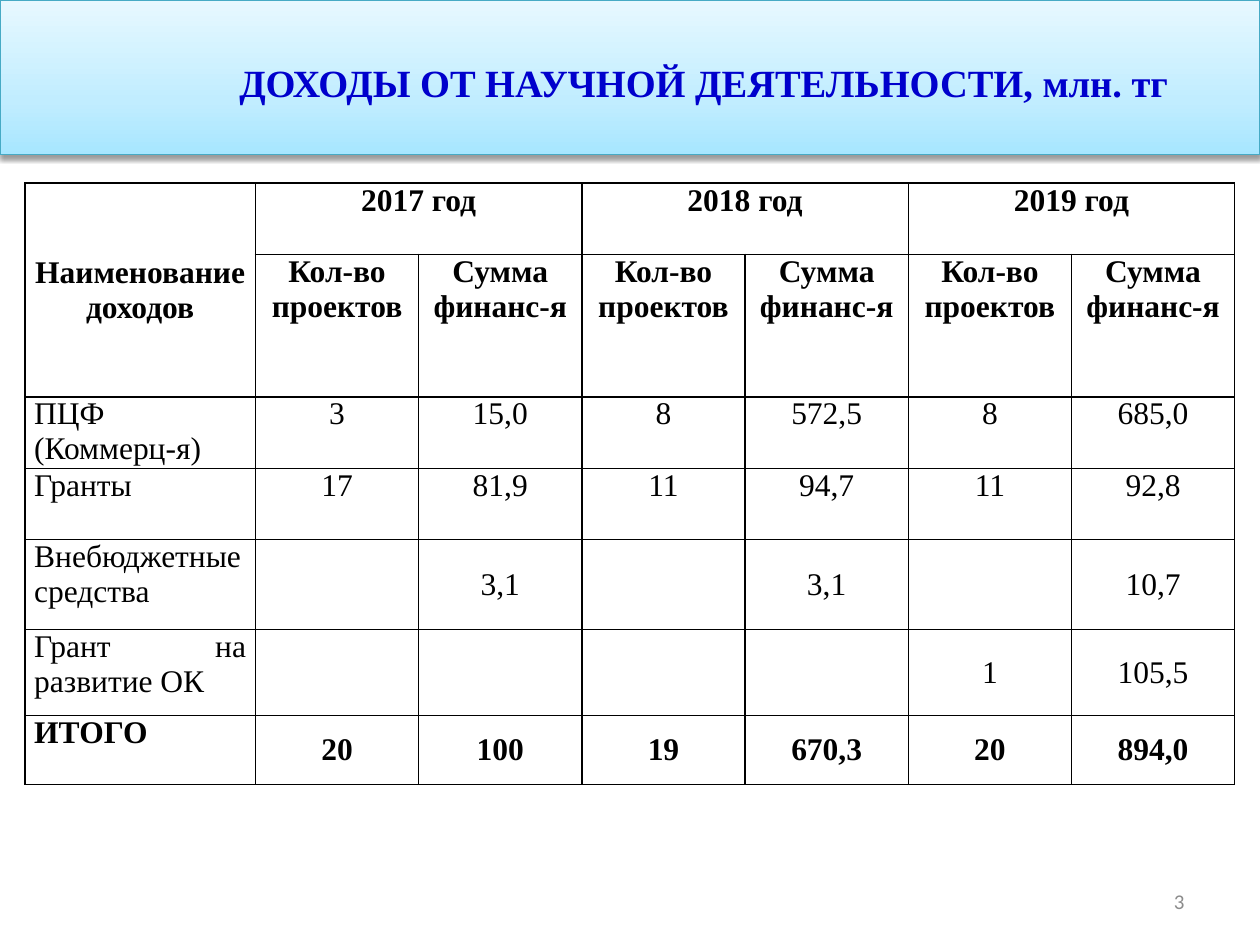
from dataclasses import dataclass

from lxml import etree
from pptx import Presentation
from pptx.dml.color import RGBColor
from pptx.enum.shapes import MSO_SHAPE
from pptx.enum.text import MSO_ANCHOR, PP_ALIGN
from pptx.oxml import parse_xml
from pptx.oxml.ns import nsdecls, qn
from pptx.util import Cm, Pt

CENTER, JUSTIFY, RIGHT = PP_ALIGN.CENTER, PP_ALIGN.JUSTIFY, PP_ALIGN.RIGHT
TOP, MIDDLE = MSO_ANCHOR.TOP, MSO_ANCHOR.MIDDLE
RECTANGLE = MSO_SHAPE.RECTANGLE
TITLE_ONLY = 5


@dataclass(frozen=True)
class Theme:
    serif: str = "Times New Roman"
    sans: str = "Calibri"
    title_size: int = 22
    table_size: int = 18
    number_size: int = 12
    title_color: str = "0000CC"
    text_color: str = "000000"
    number_color: str = "8C8C8C"
    banner_line: str = "46AAC5"
    banner_stops: tuple = ((0, "A7E6FF"), (35, "C1EDFF"), (100, "E7F8FF"))


class SlideBuilder:
    def __init__(self, slide, theme):
        self.slide = slide
        self.theme = theme

    def set_text(self, text_frame, text, font, size, color, bold=False, align=CENTER):
        text_frame.text = text
        for paragraph in text_frame.paragraphs:
            paragraph.alignment = align
            for run in paragraph.runs:
                run.font.name = font
                run.font.size = Pt(size)
                run.font.bold = bold
                run.font.color.rgb = RGBColor.from_string(color)

    def title(self, text, left, top, width, height):
        title = self.slide.shapes.title
        title.left, title.top, title.width, title.height = left, top, width, height
        title.text_frame.vertical_anchor = MIDDLE
        theme = self.theme
        self.set_text(title.text_frame, text, theme.serif, theme.title_size,
                      theme.title_color, bold=True)

    def banner(self, left, top, width, height):
        banner = self.slide.shapes.add_shape(RECTANGLE, left, top, width, height)
        banner.line.color.rgb = RGBColor.from_string(self.theme.banner_line)
        banner.line.width = Pt(0.75)
        stops = "".join(
            f'<a:gs pos="{position * 1000}"><a:srgbClr val="{color}"/></a:gs>'
            for position, color in self.theme.banner_stops)
        properties = banner.element.spPr
        properties.find(qn("a:prstGeom")).addnext(parse_xml(
            f'<a:gradFill {nsdecls("a")} rotWithShape="1"><a:gsLst>{stops}</a:gsLst>'
            '<a:lin ang="16200000" scaled="1"/></a:gradFill>'))
        properties.append(parse_xml(
            f'<a:effectLst {nsdecls("a")}><a:outerShdw blurRad="{Pt(3.1)}" '
            f'dist="{Pt(1.6)}" dir="5400000" rotWithShape="0"><a:srgbClr val="000000">'
            '<a:alpha val="38000"/></a:srgbClr></a:outerShdw></a:effectLst>'))
        # The banner lies behind the title
        self.slide.shapes.title.element.addprevious(banner.element)

    def cell_borders(self, cell):
        properties = cell._tc.get_or_add_tcPr()
        for side in ("a:lnL", "a:lnR", "a:lnT", "a:lnB"):
            line = etree.SubElement(properties, qn(side), w=str(Pt(1)))
            fill = etree.SubElement(line, qn("a:solidFill"))
            etree.SubElement(fill, qn("a:srgbClr"), val=self.theme.text_color)

    def table(self, rows, left, top, column_widths, row_heights, merges,
              bold_rows, middle_cells):
        frame = self.slide.shapes.add_table(
            len(rows), len(column_widths), left, top,
            sum(column_widths), sum(row_heights))
        table = frame.table
        table.first_row = table.horz_banding = False
        for column, width in zip(table.columns, column_widths):
            column.width = width
        for row, height in zip(table.rows, row_heights):
            row.height = height
        for first, last in merges:
            table.cell(*first).merge(table.cell(*last))

        theme = self.theme
        for row_index, values in enumerate(rows):
            for column_index, value in enumerate(values):
                cell = table.cell(row_index, column_index)
                self.cell_borders(cell)
                cell.fill.background()
                cell.margin_left = cell.margin_right = Cm(0.19)
                cell.margin_top = cell.margin_bottom = 0
                is_middle = middle_cells(row_index, column_index)
                cell.vertical_anchor = MIDDLE if is_middle else TOP
                if value:
                    is_label = column_index == 0 and row_index > 1
                    self.set_text(cell.text_frame, value, theme.serif,
                                  theme.table_size, theme.text_color,
                                  bold=row_index in bold_rows,
                                  align=JUSTIFY if is_label else CENTER)

    def slide_number(self, text, left, top, width, height):
        box = self.slide.shapes.add_textbox(left, top, width, height)
        box.text_frame.word_wrap = True
        box.text_frame.vertical_anchor = MIDDLE
        theme = self.theme
        self.set_text(box.text_frame, text, theme.sans, theme.number_size,
                      theme.number_color, align=RIGHT)


YEARS = ("2017 год", "2018 год", "2019 год")
INCOME = [
    ["Наименование доходов"] + [text for year in YEARS for text in (year, "")],
    [""] + ["Кол-во проектов", "Сумма финанс-я"] * len(YEARS),
    ["ПЦФ (Коммерц-я)", "3", "15,0", "8", "572,5", "8", "685,0"],
    ["Гранты", "17", "81,9", "11", "94,7", "11", "92,8"],
    ["Внебюджетные средства", "", "3,1", "", "3,1", "", "10,7"],
    ["Грант на развитие ОК", "", "", "", "", "1", "105,5"],
    ["ИТОГО", "20", "100", "19", "670,3", "20", "894,0"],
]


def main():
    presentation = Presentation()
    presentation.slide_width, presentation.slide_height = Cm(25.4), Cm(19.05)
    slide = presentation.slides.add_slide(presentation.slide_layouts[TITLE_ONLY])
    builder = SlideBuilder(slide, Theme())

    # Heading
    builder.banner(0, 0, presentation.slide_width, Cm(3.12))
    builder.title("ДОХОДЫ ОТ НАУЧНОЙ ДЕЯТЕЛЬНОСТИ, млн. тг",
                  Cm(4.09), 0, Cm(20.19), Cm(3.33))

    # Income table: each year spans a pair of columns
    year_merges = [((0, column), (0, column + 1)) for column in (1, 3, 5)]
    builder.table(
        INCOME, Cm(0.5), Cm(3.69),
        column_widths=[Cm(4.65)] + [Cm(3.29)] * 6,
        row_heights=[Cm(h) for h in (1.44, 2.87, 1.44, 1.44, 1.81, 1.73, 1.4)],
        merges=[((0, 0), (1, 0))] + year_merges,
        bold_rows=(0, 1, len(INCOME) - 1),
        middle_cells=lambda row, column: (row > 3) if column else row == 0)

    # Footer
    builder.slide_number("3", Cm(18.2), Cm(17.65), Cm(5.93), Cm(1.02))
    presentation.save("out.pptx")


if __name__ == "__main__":
    main()
